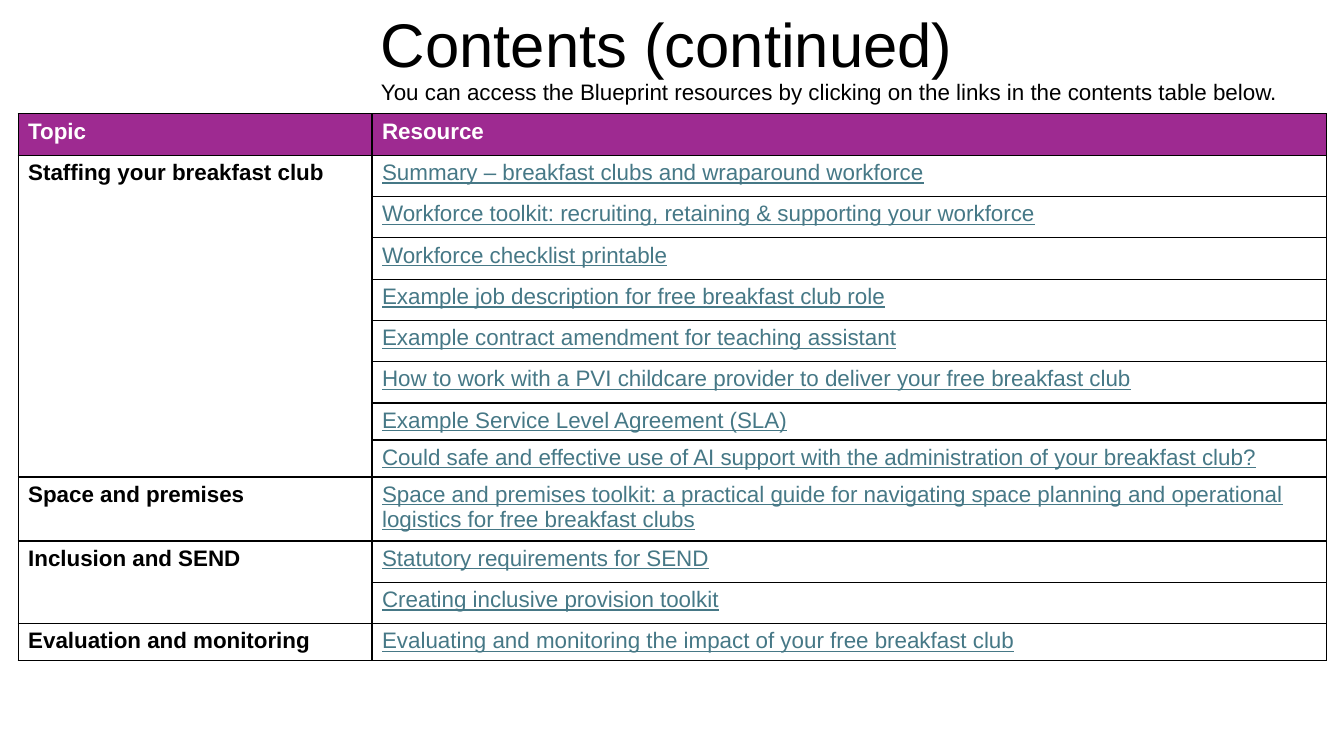
from lxml import etree
from pptx import Presentation
from pptx.dml.color import RGBColor
from pptx.enum.text import MSO_ANCHOR
from pptx.oxml.ns import qn
from pptx.util import Inches, Pt

MIDDLE, TOP = MSO_ANCHOR.MIDDLE, MSO_ANCHOR.TOP
FONT = "Arial"
COLORS = {"text": "000000", "header": "9E2A91", "header_text": "FFFFFF",
          "link": "467886", "cell": "FFFFFF", "border": "000000"}

TITLE = "Contents (continued)"
INTRO = ("You can access the Blueprint resources by clicking on the links "
         "in the contents table below.")
HEADERS = ("Topic", "Resource")
REGULAR, FIT_TEXT = 0.41, 0  # least row heights; rows grow to hold their text

# Each topic holds its resources with their least row heights.
TOPICS = [
    ("Staffing your breakfast club", [
        ("Summary – breakfast clubs and wraparound workforce", REGULAR),
        ("Workforce toolkit: recruiting, retaining & supporting your workforce", REGULAR),
        ("Workforce checklist printable", REGULAR),
        ("Example job description for free breakfast club role", REGULAR),
        ("Example contract amendment for teaching assistant", REGULAR),
        ("How to work with a PVI childcare provider to deliver your free breakfast club", REGULAR),
        ("Example Service Level Agreement (SLA)", FIT_TEXT),
        ("Could safe and effective use of AI support with the administration "
         "of your breakfast club?", FIT_TEXT),
    ]),
    ("Space and premises", [
        ("Space and premises toolkit: a practical guide for navigating space planning "
         "and operational logistics for free breakfast clubs", REGULAR),
    ]),
    ("Inclusion and SEND", [
        ("Statutory requirements for SEND", REGULAR),
        ("Creating inclusive provision toolkit", REGULAR),
    ]),
    ("Evaluation and monitoring", [
        ("Evaluating and monitoring the impact of your free breakfast club", FIT_TEXT),
    ]),
]
TABLE_LEFT, TABLE_TOP, TABLE_HEIGHT = 0.18, 1.13, 5.38
COLUMN_WIDTHS = (3.51, 9.47)


def write(tf, text, size, color, bold=False, underline=False):
    tf.text = text
    font = tf.paragraphs[0].runs[0].font
    font.name, font.size = FONT, Pt(size)
    font.bold, font.underline = bold, underline
    font.color.rgb = RGBColor.from_string(COLORS[color])


def add_text(slide, text, left, top, width, height, size, anchor):
    tf = slide.shapes.add_textbox(*map(Inches, (left, top, width, height))).text_frame
    tf.word_wrap = True
    tf.vertical_anchor = anchor
    write(tf, text, size, "text")
    return tf


def style_cell(cell, fill):
    """Draw the four cell borders, then fill the cell."""
    tc_pr = cell._tc.get_or_add_tcPr()
    for side in ("lnL", "lnR", "lnT", "lnB"):
        line = etree.SubElement(tc_pr, qn("a:" + side), w=str(Pt(1)))
        solid = etree.SubElement(line, qn("a:solidFill"))
        etree.SubElement(solid, qn("a:srgbClr"), val=COLORS["border"])
    cell.fill.solid()
    cell.fill.fore_color.rgb = RGBColor.from_string(COLORS[fill])


def add_contents_table(slide):
    heights = [REGULAR] + [h for _, resources in TOPICS for _, h in resources]
    frame = slide.shapes.add_table(
        len(heights), len(HEADERS), Inches(TABLE_LEFT), Inches(TABLE_TOP),
        Inches(sum(COLUMN_WIDTHS)), Inches(TABLE_HEIGHT))
    table = frame.table
    for column, width in zip(table.columns, COLUMN_WIDTHS):
        column.width = Inches(width)
    for i, (row, height) in enumerate(zip(table.rows, heights)):
        row.height = Inches(height)
        for cell in row.cells:
            style_cell(cell, "cell" if i else "header")
    frame.height = Inches(TABLE_HEIGHT)

    for col, header in enumerate(HEADERS):
        write(table.cell(0, col).text_frame, header, 16, "header_text", bold=True)
    first = 1
    for topic, resources in TOPICS:
        last = first + len(resources) - 1
        write(table.cell(first, 0).text_frame, topic, 16, "text", bold=True)
        for row, (resource, _) in enumerate(resources, first):
            write(table.cell(row, 1).text_frame, resource, 16, "link", underline=True)
            # Size the text of cells hidden by the merge, so they do not stretch rows.
            table.cell(row, 0).text_frame.paragraphs[0].font.size = Pt(16)
        if last > first:
            table.cell(first, 0).merge(table.cell(last, 0))
        first = last + 1


def main():
    prs = Presentation()
    prs.slide_width, prs.slide_height = Inches(13.33), Inches(7.5)
    slide = prs.slides.add_slide(prs.slide_layouts[6])
    title = add_text(slide, TITLE, 3.68, 0.04, 9.27, 0.87, 44, MIDDLE)
    title.paragraphs[0].line_spacing = 0.9
    add_contents_table(slide)
    add_text(slide, INTRO, 3.68, 0.73, 9.65, 0.37, 16, TOP)
    prs.save("out.pptx")


if __name__ == "__main__":
    main()
